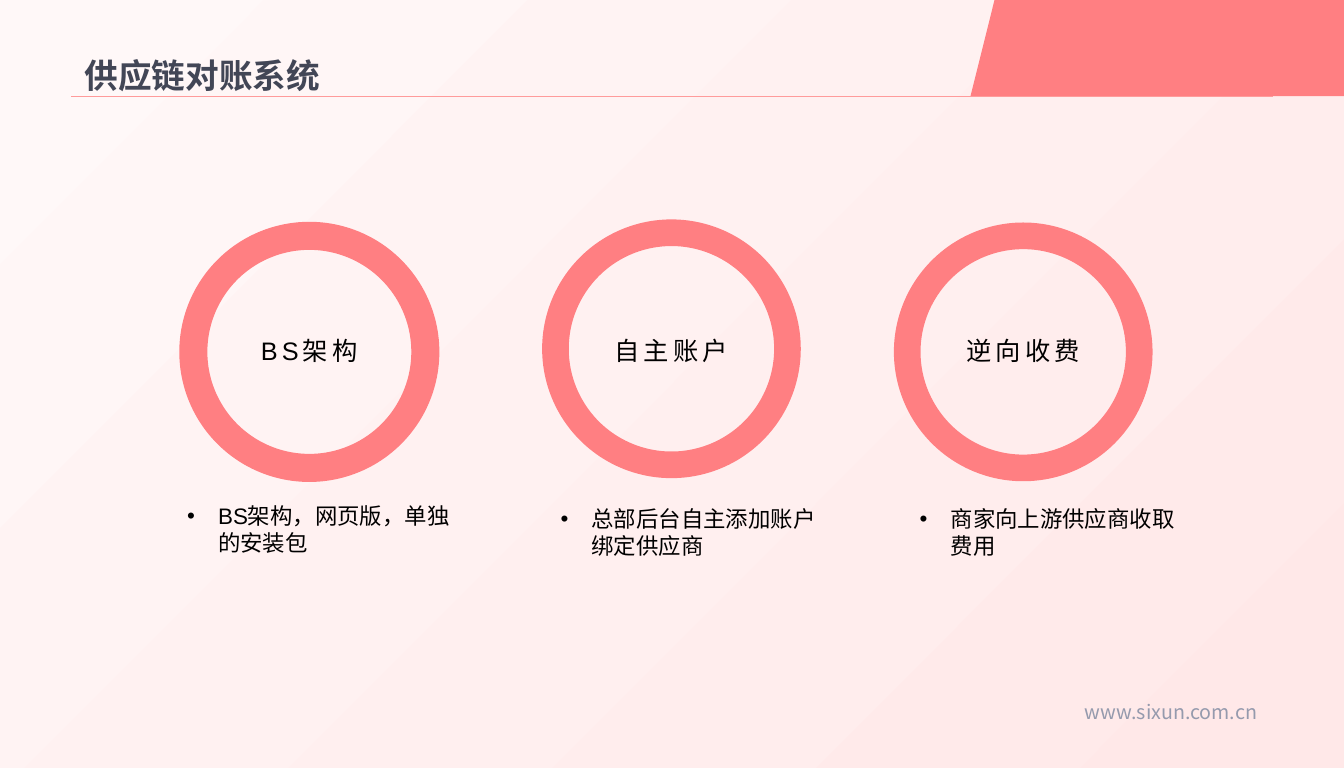
from lxml.etree import SubElement
from pptx import Presentation
from pptx.dml.color import RGBColor
from pptx.enum.shapes import MSO_CONNECTOR, MSO_SHAPE
from pptx.enum.text import MSO_ANCHOR, PP_ALIGN
from pptx.oxml.ns import qn
from pptx.util import Inches, Pt

COLORS = {
    "light": "FFF8F8", "blush": "FFE8E8", "coral": "FF7F82", "rule": "FF9B9B",
    "title": "424656", "site": "959AAD", "text": "000000",
}
CJK = "Noto Sans CJK SC"
WIDE, HIGH = 12.99, 7.42
RING = 2.5

# left, top of ring; label, its font; left, top of note; note; outline
ITEMS = [
    (1.74, 2.15, "BS架构", "Arial", 1.71, 4.8, "BS架构，网页版，单独的安装包", True),
    (5.24, 2.12, "自主账户", CJK, 5.32, 4.83, "总部后台自主添加账户绑定供应商", False),
    (8.64, 2.15, "逆向收费", "Arial", 8.79, 4.83, "商家向上游供应商收取费用", False),
]


def color(name):
    return RGBColor.from_string(COLORS[name])


def add_text(slide, box, text, size, face="Arial", tone="text", bullet=False,
             align=PP_ALIGN.LEFT, anchor=MSO_ANCHOR.TOP, wrap=True):
    frame = slide.shapes.add_textbox(*map(Inches, box)).text_frame
    frame.word_wrap = wrap
    frame.vertical_anchor = anchor
    para = frame.paragraphs[0]
    para.text = text
    para.alignment = align
    if bullet:
        props = para._p.get_or_add_pPr()
        props.set("marL", str(Inches(0.3)))
        props.set("indent", str(-Inches(0.3)))
        SubElement(props, qn("a:buFont")).set("typeface", "Arial")
        SubElement(props, qn("a:buChar")).set("char", "•")
    font = para.font
    font.size = Pt(size)
    font.name = face
    font.color.rgb = color(tone)
    SubElement(font._element, qn("a:ea")).set("typeface", CJK)
    return para


def add_solid(slide, kind, box):
    shape = slide.shapes.add_shape(kind, *map(Inches, box))
    shape.shadow.inherit = False
    shape.fill.solid()
    shape.fill.fore_color.rgb = color("coral")
    shape.line.fill.background()
    return shape


def add_back(slide):
    fill = slide.background.fill
    fill.gradient()
    fill.gradient_angle = 315
    for stop, name in zip(fill.gradient_stops, ("light", "blush")):
        stop.color.rgb = color(name)
        stop.position = 0 if name == "light" else 1


def add_head(slide, left, top, width, height):
    base = top + height
    # Corner block
    add_solid(slide, MSO_SHAPE.PARALLELOGRAM, (left + 8.69, top, 3.91, height))
    # Rule under the title
    rule = slide.shapes.add_connector(
        MSO_CONNECTOR.STRAIGHT, Inches(left), Inches(base),
        Inches(left + width), Inches(base))
    rule.line.color.rgb = color("rule")
    rule.line.width = Pt(0.5)
    SubElement(rule._element.spPr, qn("a:effectLst"))
    # Title
    para = add_text(slide, (left + 0.03, base - 0.59, 4.61, 0.63),
                    "供应链对账系统", 23.4, CJK, "title",
                    anchor=MSO_ANCHOR.BOTTOM, wrap=False)
    para.line_spacing = 2.0
    para.font.bold = True


def add_item(slide, left, top, label, face, note_x, note_y, note, edge):
    # Ring
    ring = add_solid(slide, MSO_SHAPE.DONUT, (left, top, RING, RING))
    ring.adjustments[0] = 0.103
    if edge:
        ring.line.color.rgb = color("coral")
        ring.line.width = Pt(1)
    # Label in the ring
    para = add_text(slide, (left + 0.32, 3.19, RING - 0.64, 0.39), label, 17.6,
                    face, align=PP_ALIGN.CENTER, anchor=MSO_ANCHOR.BOTTOM)
    para.font._element.set("spc", "290")
    # Note below
    add_text(slide, (note_x, note_y, 2.74, 0.62), note, 15.6, bullet=True)


def add_foot(slide, right, top):
    add_text(slide, (right - 2.15, top, 2.15, 0.33), "www.sixun.com.cn", 13.7,
             CJK, "site", align=PP_ALIGN.RIGHT)


def main():
    deck = Presentation()
    deck.slide_width, deck.slide_height = Inches(WIDE), Inches(HIGH)
    slide = deck.slides.add_slide(deck.slide_layouts[6])
    add_back(slide)
    add_head(slide, 0.69, 0, 11.61, 0.93)
    for item in ITEMS:
        add_item(slide, *item)
    add_foot(slide, 12.25, 6.71)
    deck.save("out.pptx")


if __name__ == "__main__":
    main()
